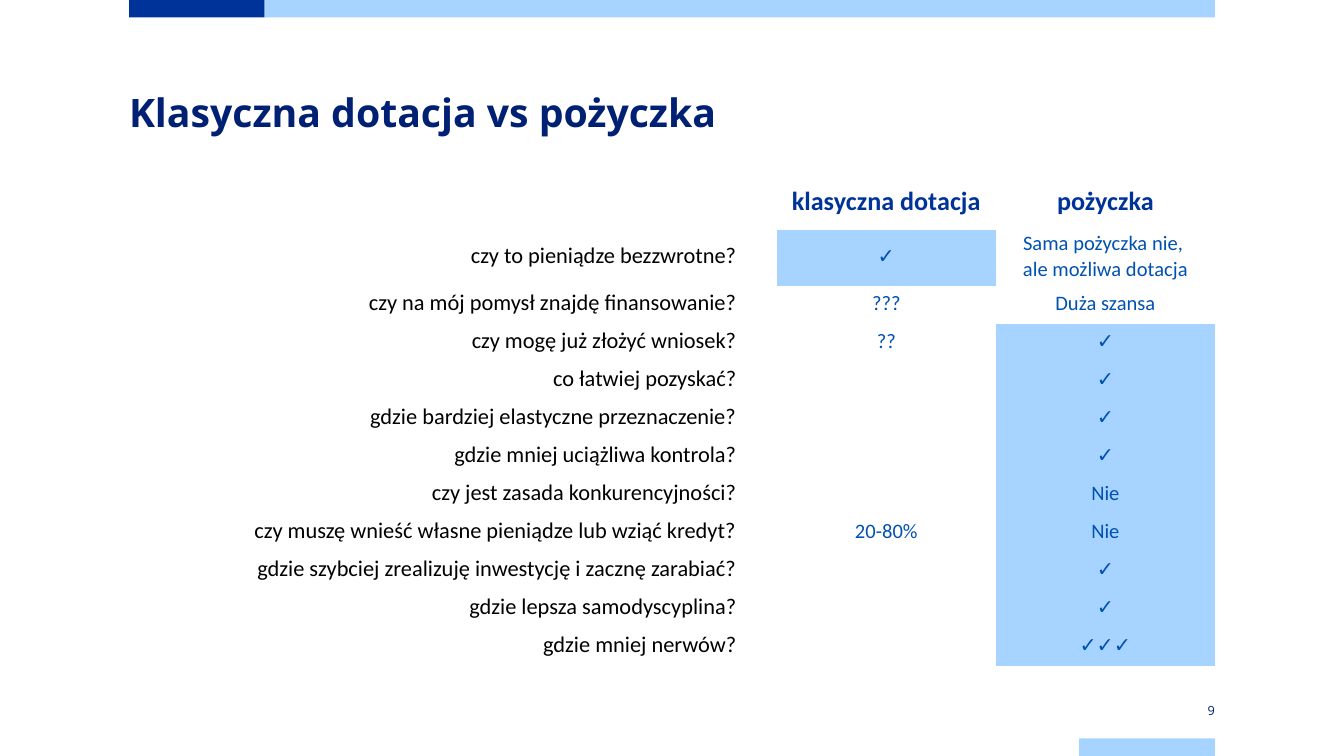
from lxml.etree import SubElement
from pptx import Presentation
from pptx.dml.color import RGBColor
from pptx.enum.shapes import MSO_SHAPE
from pptx.enum.text import MSO_ANCHOR, PP_ALIGN
from pptx.oxml.ns import qn
from pptx.util import Inches, Pt

NAVY = RGBColor(0x00, 0x20, 0x73)
BLUE = RGBColor(0x00, 0x33, 0x99)
MID_BLUE = RGBColor(0x00, 0x51, 0xB0)
LIGHT_BLUE = RGBColor(0xA6, 0xD3, 0xFF)
BLACK = RGBColor(0x00, 0x00, 0x00)

# Widescreen slide, 16:9
SLIDE_WIDTH = 10
SLIDE_HEIGHT = SLIDE_WIDTH * 9 / 16
LEFT, RIGHT, BLOCK, BAR_HEIGHT = 0.96, 9.04, 1.01, 0.13
NO_GRID_STYLE = "{2D5ABB26-0587-4C30-8999-92F81FD0307C}"

# Question, grant answer, loan answer, highlighted column
ROWS = [
    ("czy to pieniądze bezzwrotne?", "✓", "Sama pożyczka nie, \nale możliwa dotacja", 1),
    ("czy na mój pomysł znajdę finansowanie?", "???", "Duża szansa", None),
    ("czy mogę już złożyć wniosek?", "??", "✓", 2),
    ("co łatwiej pozyskać?", "", "✓", 2),
    ("gdzie bardziej elastyczne przeznaczenie?", "", "✓", 2),
    ("gdzie mniej uciążliwa kontrola?", "", "✓", 2),
    ("czy jest zasada konkurencyjności?", "", "Nie", 2),
    ("czy muszę wnieść własne pieniądze lub wziąć kredyt?", "20-80%", "Nie", 2),
    ("gdzie szybciej zrealizuję inwestycję i zacznę zarabiać?", "", "✓", 2),
    ("gdzie lepsza samodyscyplina?", "", "✓", 2),
    ("gdzie mniej nerwów?", "", "✓✓✓", 2),
]


def write_text(frame, text, size, color, font="Calibri", bold=False,
               align=PP_ALIGN.LEFT, line_spacing=None):
    for index, line in enumerate(text.split("\n")):
        paragraph = frame.paragraphs[0] if index == 0 else frame.add_paragraph()
        paragraph.alignment = align
        if line_spacing:
            paragraph.line_spacing = Pt(line_spacing)
        if not line:
            # An empty cell needs a small font so that its row stays low
            SubElement(paragraph._p, qn("a:endParaRPr"), sz=str(size * 100))
            continue
        run = paragraph.add_run()
        run.text = line
        run.font.name, run.font.size, run.font.bold = font, Pt(size), bold
        run.font.color.rgb = color


class SlideBuilder:
    heading_font = "Open Sans"

    def __init__(self, slide):
        self.slide = slide

    def bar(self, left, top, width, color):
        shape = self.slide.shapes.add_shape(
            MSO_SHAPE.RECTANGLE, Inches(left), Inches(top), Inches(width), Inches(BAR_HEIGHT))
        shape.shadow.inherit = False
        shape.fill.solid()
        shape.fill.fore_color.rgb = color
        shape.line.fill.background()

    def prepare_frame(self, frame, anchor):
        frame.word_wrap = True
        frame.vertical_anchor = anchor
        frame.margin_left = frame.margin_right = 0
        frame.margin_top = frame.margin_bottom = 0

    def title(self, text):
        title = self.slide.shapes.title
        title.left, title.top = Inches(LEFT), Inches(0.67)
        title.width, title.height = Inches(RIGHT - LEFT), Inches(0.8)
        self.prepare_frame(title.text_frame, MSO_ANCHOR.TOP)
        write_text(title.text_frame, text, 21, NAVY, font=self.heading_font,
                   bold=True, line_spacing=24.5)

    def page_number(self, text):
        box = self.slide.shapes.add_textbox(
            Inches(RIGHT - BLOCK), Inches(5.22), Inches(BLOCK), Inches(0.13))
        self.prepare_frame(box.text_frame, MSO_ANCHOR.MIDDLE)
        write_text(box.text_frame, text, 6.8, NAVY, font=self.heading_font,
                   align=PP_ALIGN.RIGHT)

    def cell(self, cell, text, size, color, fill=None, right_margin=0.01, **text_format):
        cell.vertical_anchor = MSO_ANCHOR.MIDDLE
        cell.margin_left = cell.margin_top = Inches(0.01)
        cell.margin_right, cell.margin_bottom = Inches(right_margin), Inches(0.04)
        if fill is None:
            cell.fill.background()
        else:
            cell.fill.solid()
            cell.fill.fore_color.rgb = fill
        write_text(cell.text_frame, text, size, color, **text_format)

    def comparison_table(self, headers, rows):
        height, header_height, first_height = 3.64, 0.39, 0.42
        row_height = (height - header_height - first_height) / (len(rows) - 1)
        table = self.slide.shapes.add_table(
            len(rows) + 1, 3, Inches(0.59), Inches(1.32), Inches(8.45), Inches(height)).table
        table.first_row = table.horz_banding = False
        table._tbl.tblPr.find(qn("a:tableStyleId")).text = NO_GRID_STYLE
        for column, width in zip(table.columns, (5.19, 1.63, 1.63)):
            column.width = Inches(width)
        heights = [header_height, first_height] + [row_height] * (len(rows) - 1)
        for row, value in zip(table.rows, heights):
            row.height = Inches(value)

        for column, header in enumerate(headers):
            self.cell(table.cell(0, column), header, 14, BLUE, bold=True,
                      align=PP_ALIGN.CENTER)
        for index, (question, *answers, highlight) in enumerate(rows, start=1):
            self.cell(table.cell(index, 0), question, 12, BLACK, right_margin=0.3,
                      align=PP_ALIGN.RIGHT)
            for column, answer in enumerate(answers, start=1):
                self.cell(table.cell(index, column), answer, 11, MID_BLUE,
                          fill=LIGHT_BLUE if column == highlight else None,
                          align=PP_ALIGN.CENTER)


def main():
    presentation = Presentation()
    presentation.slide_width = Inches(SLIDE_WIDTH)
    presentation.slide_height = Inches(SLIDE_HEIGHT)
    title_only = presentation.slide_layouts[5]
    builder = SlideBuilder(presentation.slides.add_slide(title_only))

    # Decorative bars
    builder.bar(LEFT, 0, BLOCK, BLUE)
    builder.bar(LEFT + BLOCK, 0, RIGHT - LEFT - BLOCK, LIGHT_BLUE)
    builder.bar(RIGHT - BLOCK, SLIDE_HEIGHT - BAR_HEIGHT, BLOCK, LIGHT_BLUE)

    # Content
    builder.title("Klasyczna dotacja vs pożyczka")
    builder.page_number("9")
    builder.comparison_table(("", "klasyczna dotacja", "pożyczka"), ROWS)
    presentation.save("out.pptx")


if __name__ == "__main__":
    main()
